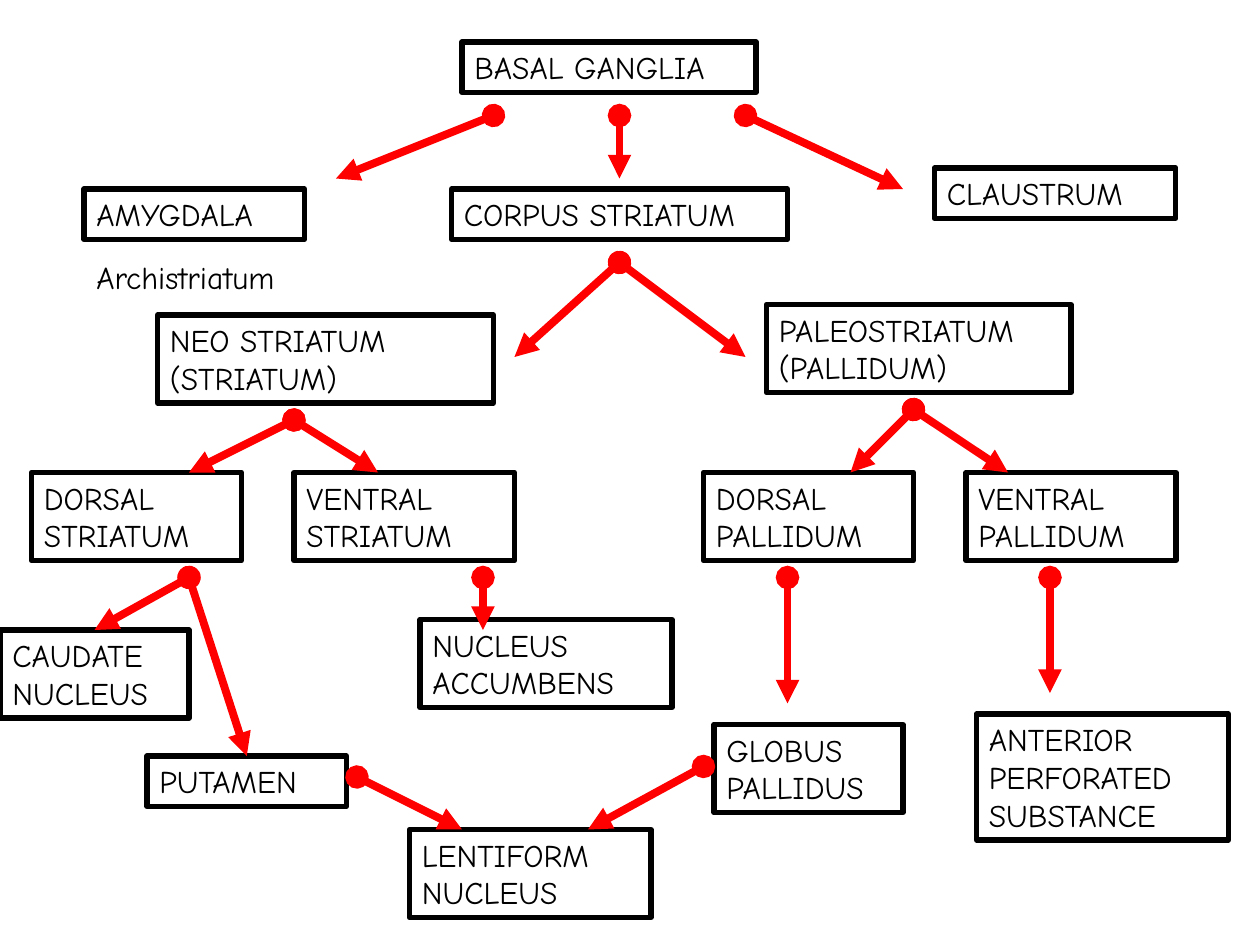
"""Build a one-slide tree of the basal ganglia and their subdivisions."""
import pptx
import pptx.dml.color
import pptx.enum.shapes
import pptx.enum.text
import pptx.oxml.xmlchemy
import pptx.util

presentation = pptx.Presentation()
presentation.slide_width = pptx.util.Inches(10)
presentation.slide_height = pptx.util.Inches(7.5)
slide = presentation.slides.add_slide(presentation.slide_layouts[6])

COLUMN = presentation.slide_width / 120
ROW = presentation.slide_height / 90


def color(hex_text):
    return pptx.dml.color.RGBColor.from_string(hex_text)


def write(shape, text):
    frame = shape.text_frame
    frame.text = text
    frame.word_wrap = True
    frame.auto_size = pptx.enum.text.MSO_AUTO_SIZE.SHAPE_TO_FIT_TEXT
    frame.vertical_anchor = pptx.enum.text.MSO_ANCHOR.TOP
    for paragraph in frame.paragraphs:
        paragraph.alignment = pptx.enum.text.PP_ALIGN.LEFT
        paragraph.font.name = "Comic Neue"
        paragraph.font.size = pptx.util.Pt(18)
        paragraph.font.color.rgb = color("000000")


boxes = [
    ("BASAL GANGLIA", 44, 4, 28, 1),
    ("CORPUS STRIATUM", 43, 18, 32, 1),
    ("AMYGDALA", 8, 18, 21, 1),
    ("CLAUSTRUM", 89, 16, 23, 1),
    ("NEO STRIATUM (STRIATUM)", 15, 30, 32, 2),
    ("PALEOSTRIATUM (PALLIDUM)", 73, 29, 29, 2),
    ("DORSAL STRIATUM", 3, 45, 20, 2),
    ("VENTRAL STRIATUM", 28, 45, 21, 2),
    ("DORSAL\nPALLIDUM", 67, 45, 20, 2),
    ("VENTRAL PALLIDUM", 92, 45, 20, 2),
    ("GLOBUS PALLIDUS", 68, 69, 18, 2),
    ("PUTAMEN", 14, 72, 19, 1),
    ("LENTIFORM NUCLEUS", 39, 79, 23, 2),
    ("NUCLEUS ACCUMBENS", 40, 59, 24, 2),
    ("CAUDATE NUCLEUS", 0, 60, 18, 2),
    ("ANTERIOR PERFORATED SUBSTANCE", 93, 68, 24, 3),
]
box_shapes = {}
for text, column, row, columns, lines in boxes:
    shape = slide.shapes.add_shape(
        pptx.enum.shapes.MSO_SHAPE.RECTANGLE, int(column * COLUMN), int(row * ROW),
        int(columns * COLUMN), pptx.util.Inches(0.1 + 0.3 * lines))
    shape.shadow.inherit = False
    shape.fill.background()
    shape.line.color.rgb = color("000000")
    shape.line.width = pptx.util.Pt(3)
    write(shape, text)
    box_shapes[text] = shape

arrows = [
    (71, 11, [(86, 18, None)]),
    (59, 11, [(59, 17, None)]),
    (47, 11, [(32, 17, None)]),
    (59, 25, [(71, 34, None), (49, 34, None)]),
    (87, 39, [(81, 45, None), (96, 45, None)]),
    (28, 40, [(36, 45, None), (18, 45, None)]),
    (75, 55, [(75, 67, None)]),
    (100, 55, [(100, 66, None)]),
    (18, 55, [(9, 60, "CAUDATE NUCLEUS"), (23.5, 72, "PUTAMEN")]),
    (46, 55, [(46, 60, None)]),
    (34, 74, [(44, 79, None)]),
    (67, 73, [(56, 79, None)]),
]
for start_column, start_row, ends in arrows:
    for end_column, end_row, target in ends:
        connector = slide.shapes.add_connector(
            pptx.enum.shapes.MSO_CONNECTOR.STRAIGHT,
            int(start_column * COLUMN), int(start_row * ROW),
            int(end_column * COLUMN), int(end_row * ROW))
        if target:
            connector.end_connect(box_shapes[target], 0)
        connector.line.color.rgb = color("FF0000")
        connector.line.width = pptx.util.Pt(4.5)
        line = connector.line._get_or_add_ln()
        for tag, kind in (("a:headEnd", "oval"), ("a:tailEnd", "triangle")):
            arrowhead = pptx.oxml.xmlchemy.OxmlElement(tag)
            arrowhead.set("type", kind)
            line.append(arrowhead)
        connector._element.spPr.append(pptx.oxml.xmlchemy.OxmlElement("a:effectLst"))

label = slide.shapes.add_textbox(
    int(8 * COLUMN), int(24 * ROW), int(24 * COLUMN), pptx.util.Inches(0.4))
write(label, "Archistriatum")

presentation.save("out.pptx")
